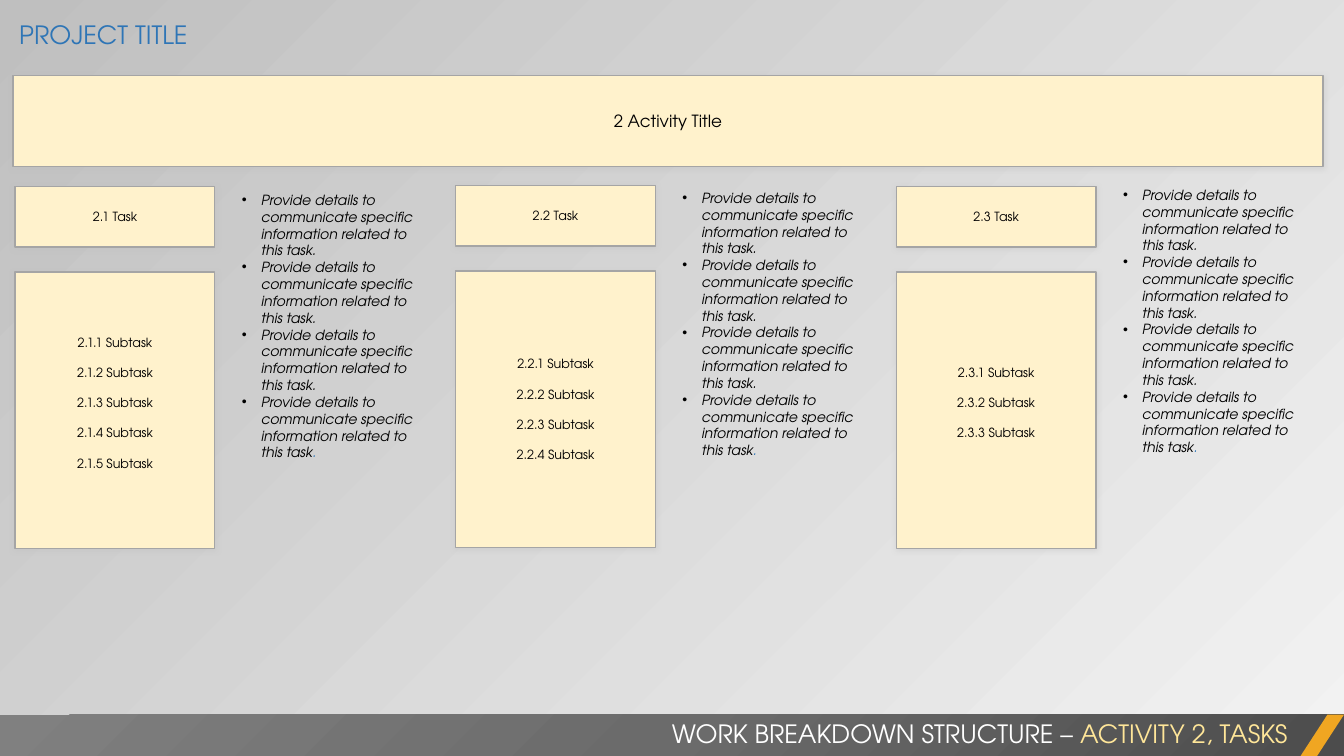
import pptx
import pptx.dml.color
import pptx.enum.shapes
import pptx.enum.text
import pptx.oxml
import pptx.oxml.ns
import pptx.util

SHAPE = pptx.enum.shapes.MSO_SHAPE
ALIGN = pptx.enum.text.PP_ALIGN
ANCHOR = pptx.enum.text.MSO_ANCHOR
BLACK, BLUE, CREAM, GREY = "000000", "2E75B6", "FFF2CC", "A5A5A5"
DETAIL = "Provide details to communicate specific information related to this task"


def colour(code):
    return pptx.dml.color.RGBColor.from_string(code)


def element(markup):
    """Build one DrawingML element, adding its namespace."""
    head, tail = markup.split(" ", 1)
    return pptx.oxml.parse_xml(f"{head} {pptx.oxml.ns.nsdecls('a')} {tail}")


class Sheet:
    """The slide and its style; places are percentages of the slide's size."""

    font = "TeX Gyre Adventor"

    def __init__(self, deck):
        self.deck = deck
        self.page = deck.slides.add_slide(deck.slide_layouts[5])

    def place(self, left, top, width, height):
        across, down = self.deck.slide_width / 100, self.deck.slide_height / 100
        return [round(length) for length in
                (left * across, top * down, width * across, height * down)]

    def background(self, start, end, angle):
        fill = self.page.background.fill
        fill.gradient()
        fill.gradient_angle = angle
        for stop, code in zip(fill.gradient_stops, (start, end)):
            stop.color.rgb = colour(code)

    def set_text(self, box, paragraphs, size, align=ALIGN.LEFT, anchor=ANCHOR.TOP,
                 italic=False):
        """Fill a box; each paragraph is a list of (text, colour) spans."""
        frame = box.text_frame
        frame.word_wrap = True
        frame.auto_size = pptx.enum.text.MSO_AUTO_SIZE.NONE
        frame.vertical_anchor = anchor
        for index, spans in enumerate(paragraphs):
            para = frame.add_paragraph() if index else frame.paragraphs[0]
            para.alignment = align
            for text, code in spans:
                span = para.add_run()
                span.text = text
                span.font.name = self.font
                span.font.size = pptx.util.Pt(size)
                span.font.italic = italic
                span.font.color.rgb = colour(code)
        return frame

    def title(self, place, text, size, code):
        box = self.page.shapes.title
        box.left, box.top, box.width, box.height = self.place(*place)
        self.set_text(box, [[(text, code)]], size)

    def label(self, place, paragraphs, size, **style):
        box = self.page.shapes.add_textbox(*self.place(*place))
        return self.set_text(box, paragraphs, size, **style)

    def shape(self, kind, place, fill):
        shape = self.page.shapes.add_shape(kind, *self.place(*place))
        shape.shadow.inherit = False
        shape.fill.solid()
        shape.fill.fore_color.rgb = colour(fill)
        shape.line.fill.background()
        return shape

    def card(self, place, lines, size):
        """A cream box with a thin border, a soft shadow and centred lines."""
        card = self.shape(SHAPE.RECTANGLE, place, CREAM)
        card.line.color.rgb = colour(GREY)
        card.line.width = pptx.util.Pt(1)
        effects = card._element.spPr.find(pptx.oxml.ns.qn("a:effectLst"))
        effects.append(element(
            '<a:outerShdw blurRad="50800" dist="12700" dir="5400000" rotWithShape="0">'
            '<a:srgbClr val="BFBFBF"><a:alpha val="40000"/></a:srgbClr></a:outerShdw>'))
        paragraphs = [[(line, BLACK)] for line in lines]
        frame = self.set_text(card, paragraphs, size, ALIGN.CENTER, ANCHOR.MIDDLE)
        for para in frame.paragraphs[1:]:
            para.space_before = pptx.util.Pt(10.8)
        return frame

    def band(self, place, codes):
        """A bar shaded outwards from its lower right corner."""
        bar = self.shape(SHAPE.RECTANGLE, place, codes[0])
        step = 100000 // (len(codes) - 1)
        stops = "".join(f'<a:gs pos="{step * index}"><a:srgbClr val="{code}"/></a:gs>'
                        for index, code in enumerate(codes))
        solid = bar._element.spPr.find(pptx.oxml.ns.qn("a:solidFill"))
        solid.getparent().replace(solid, element(
            f'<a:gradFill rotWithShape="1"><a:gsLst>{stops}</a:gsLst><a:path path="circle">'
            '<a:fillToRect l="100000" t="100000"/></a:path></a:gradFill>'))

    def bullets(self, place, paragraphs, size):
        frame = self.label(place, paragraphs, size, italic=True)
        indent = pptx.util.Inches(0.19)
        for para in frame.paragraphs:
            properties = para._p.get_or_add_pPr()
            properties.set("marL", str(indent))
            properties.set("indent", str(-indent))
            properties.append(element('<a:buFont typeface="Arial"/>'))
            properties.append(element('<a:buChar char="•"/>'))


def main():
    deck = pptx.Presentation()
    deck.slide_width = pptx.util.Inches(13.33)
    deck.slide_height = pptx.util.Inches(7.5)
    sheet = Sheet(deck)
    sheet.background("F2F2F2", "BFBFBF", 135)

    # Heading and activity
    sheet.title((0.68, 1.87, 75.84, 5.33), "PROJECT TITLE", 18, BLUE)
    sheet.card((0.98, 10, 97.45, 12), ["2 Activity Title"], 12)

    # Footer
    sheet.band((0, 94.53, 100, 5.47), ["4C4C4C", "6B6B6B", "808080"])
    slash = sheet.shape(SHAPE.PARALLELOGRAM, (96.77, 94.53, 3.23, 5.47), "F0A622")
    slash.adjustments[0] = 0.65
    sheet.label((39.38, 94.4, 57.16, 5.33),
                [[("WORK BREAKDOWN STRUCTURE – ", "FFFFFF"),
                  ("ACTIVITY 2, TASKS", "FFE699")]], 18, align=ALIGN.RIGHT)

    # Task columns: card top, details top, subtask count, lower inset in inches
    columns = [(24.67, 24.67, 5, 0.2), (24.53, 24.4, 4, 0.05), (24.67, 24, 3, 0.2)]
    details = [[(DETAIL + ".", BLACK)]] * 3 + [[(DETAIL, BLACK), (".", BLUE)]]
    for index, (top, details_top, count, inset) in enumerate(columns):
        left = 1.13 + 32.78 * index
        task = f"2.{index + 1}"
        sheet.card((left, top, 14.85, 8), [f"{task} Task"], 9)
        subtasks = [f"{task}.{number} Subtask" for number in range(1, count + 1)]
        frame = sheet.card((left, top + 11.33, 14.85, 36.53), subtasks, 9)
        frame.margin_bottom = pptx.util.Inches(inset)
        sheet.bullets((left + 16.13, details_top, 15.45, 40), details, 10)

    deck.save("out.pptx")


if __name__ == "__main__":
    main()
